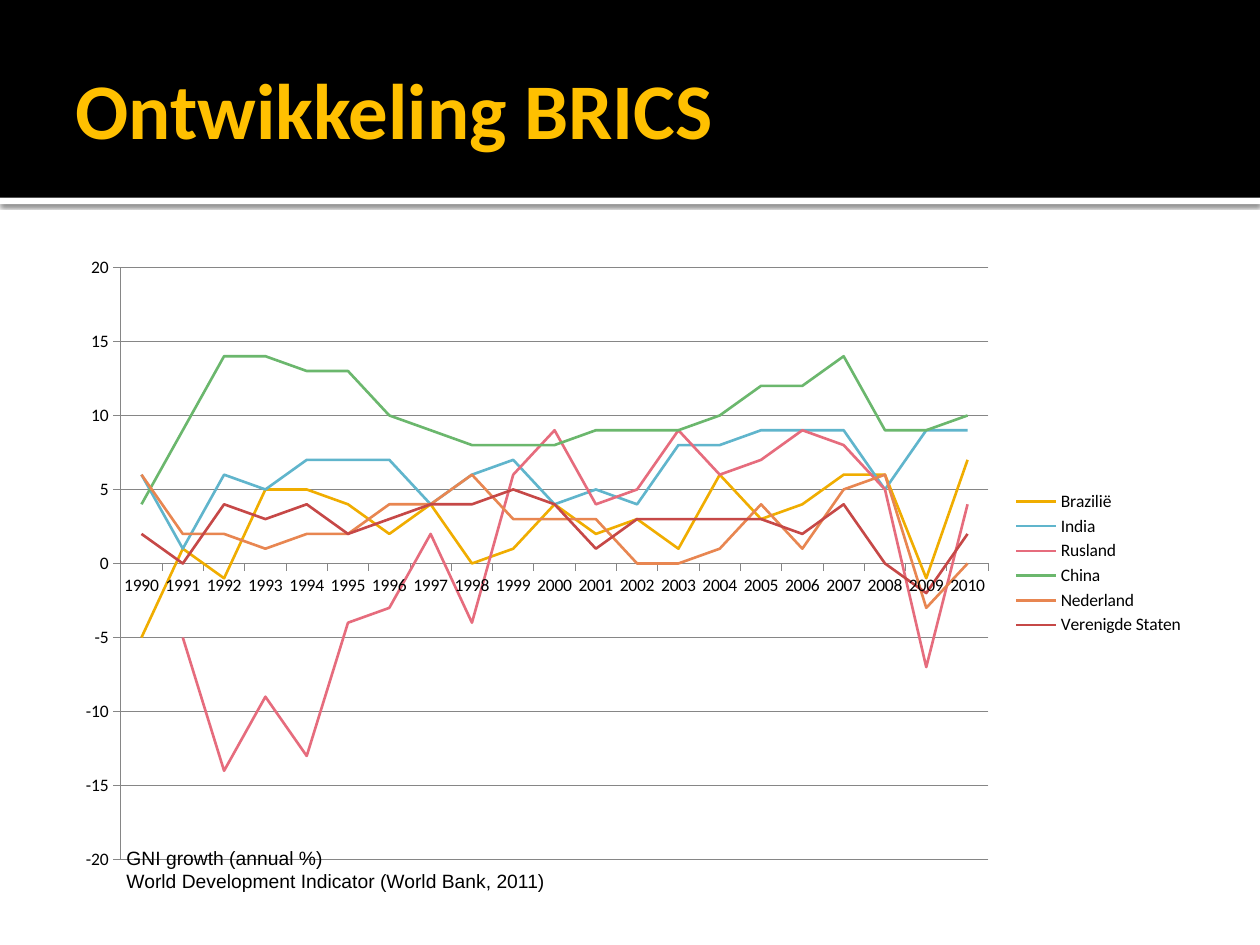
from lxml import etree
from pptx import Presentation
from pptx import util as u
from pptx.chart.data import CategoryChartData
from pptx.dml.color import RGBColor
from pptx.enum import chart as charts, shapes, text
from pptx.oxml import parse_xml
from pptx.oxml.ns import nsdecls, qn

WIDTH, HEIGHT = u.Inches(10), u.Inches(7.5)

BLACK = RGBColor(0x00, 0x00, 0x00)
WHITE = RGBColor(0xFF, 0xFF, 0xFF)
GOLD = RGBColor(0xFF, 0xC0, 0x00)
GREY = RGBColor(0x86, 0x86, 0x86)

# Growth in whole percent, the precision of the value axis
YEARS = [str(year) for year in range(1990, 2011)]
GROWTH = [
    ("Brazilië", RGBColor(0xF0, 0xAD, 0x00),
     [-5, 1, -1, 5, 5, 4, 2, 4, 0, 1, 4, 2, 3, 1, 6, 3, 4, 6, 6, -1, 7]),
    ("India", RGBColor(0x60, 0xB5, 0xCC),
     [6, 1, 6, 5, 7, 7, 7, 4, 6, 7, 4, 5, 4, 8, 8, 9, 9, 9, 5, 9, 9]),
    ("Rusland", RGBColor(0xE6, 0x6C, 0x7D),
     [None, -5, -14, -9, -13, -4, -3, 2, -4, 6, 9, 4, 5, 9, 6, 7, 9, 8, 5, -7, 4]),
    ("China", RGBColor(0x6B, 0xB7, 0x6D),
     [4, 9, 14, 14, 13, 13, 10, 9, 8, 8, 8, 9, 9, 9, 10, 12, 12, 14, 9, 9, 10]),
    ("Nederland", RGBColor(0xE8, 0x86, 0x51),
     [6, 2, 2, 1, 2, 2, 4, 4, 6, 3, 3, 3, 0, 0, 1, 4, 1, 5, 6, -3, 0]),
    ("Verenigde Staten", RGBColor(0xC6, 0x48, 0x47),
     [2, 0, 4, 3, 4, 2, 3, 4, 4, 5, 4, 1, 3, 3, 3, 3, 2, 4, 0, -2, 2]),
]


def area(left, top, width, height):
    """Turn percentages of the slide's size into lengths."""
    return (int(WIDTH * left / 100), int(HEIGHT * top / 100),
            int(WIDTH * width / 100), int(HEIGHT * height / 100))


def add_band(page, place, color):
    band = page.shapes.add_shape(shapes.MSO_SHAPE.RECTANGLE, *area(*place))
    band.shadow.inherit = False
    band.fill.solid()
    band.fill.fore_color.rgb = color
    band.line.fill.background()
    return band


def add_soft_shadow(shape):
    effects = shape.element.spPr.find(qn("a:effectLst"))
    effects.append(parse_xml(
        f'<a:outerShdw {nsdecls("a")} blurRad="{u.Pt(2.5)}" dist="{u.Pt(0.8)}" '
        'dir="5400000" algn="tl" rotWithShape="0"><a:srgbClr val="000000">'
        '<a:alpha val="60000"/></a:srgbClr></a:outerShdw>'))


def add_text(page, place, lines, font, size, color, bold=False,
             anchor=text.MSO_ANCHOR.TOP):
    box = page.shapes.add_textbox(*area(*place))
    frame = box.text_frame
    frame.word_wrap = True
    frame.vertical_anchor = anchor
    for index, line in enumerate(lines):
        para = frame.add_paragraph() if index else frame.paragraphs[0]
        span = para.add_run()
        span.text = line
        span.font.name = font
        span.font.size = u.Pt(size)
        span.font.bold = bold
        span.font.color.rgb = color


def set_plot_area(chart, **percents):
    """Fix the inner plot area, in percentages of the chart's size."""
    plot_area = chart.element.find(".//" + qn("c:plotArea"))
    for old in plot_area.findall(qn("c:layout")):
        plot_area.remove(old)
    layout = etree.Element(qn("c:layout"))
    manual = etree.SubElement(layout, qn("c:manualLayout"))
    settings = {"layoutTarget": "inner", "xMode": "edge", "yMode": "edge"}
    settings.update((name, value / 100) for name, value in percents.items())
    for name, value in settings.items():
        etree.SubElement(manual, qn("c:" + name)).set("val", str(value))
    plot_area.insert(0, layout)


def style_line(line, color, width):
    line.color.rgb = color
    line.width = u.Pt(width)


def style_axis(axis):
    axis.major_tick_mark = charts.XL_TICK_MARK.OUTSIDE
    axis.minor_tick_mark = charts.XL_TICK_MARK.NONE
    style_line(axis.format.line, GREY, 0.5)


def add_growth_chart(page, place):
    data = CategoryChartData(number_format="General")
    data.categories = YEARS
    for name, _, values in GROWTH:
        data.add_series(name, values)
    chart = page.shapes.add_chart(
        charts.XL_CHART_TYPE.LINE, *area(*place), data).chart
    chart.has_title = False
    chart.font.name = "Calibri"
    chart.font.size = u.Pt(10)
    chart.font.color.rgb = BLACK

    # Axes and gridlines
    style_axis(chart.category_axis)
    scale = chart.value_axis
    style_axis(scale)
    scale.minimum_scale, scale.maximum_scale, scale.major_unit = -20, 20, 5
    scale.has_major_gridlines = True
    style_line(scale.major_gridlines.format.line, GREY, 0.5)

    # Country lines
    plot = chart.plots[0]
    plot.vary_by_categories = False
    for series, (_, color, _) in zip(plot.series, GROWTH):
        series.smooth = False
        series.marker.style = charts.XL_MARKER_STYLE.NONE
        style_line(series.format.line, color, 1.5)

    chart.has_legend = True
    chart.legend.position = charts.XL_LEGEND_POSITION.RIGHT
    chart.legend.include_in_layout = False
    set_plot_area(chart, x=5.1, y=3.6, w=76.5, h=92.9)


def main():
    deck = Presentation()
    deck.slide_width, deck.slide_height = WIDTH, HEIGHT
    page = deck.slides.add_slide(deck.slide_layouts[6])
    page.background.fill.solid()
    page.background.fill.fore_color.rgb = WHITE

    # Header
    add_soft_shadow(add_band(page, (0, 20.93, 100, 0.67), WHITE))
    add_band(page, (0, 0, 100, 20.93), BLACK)
    add_text(page, (5, 2.27, 90, 18.27), ["Ontwikkeling BRICS"], "Calibri", 45,
             GOLD, bold=True, anchor=text.MSO_ANCHOR.MIDDLE)

    # Chart and its source
    add_growth_chart(page, (5, 25.87, 90, 67.47))
    add_text(page, (9.05, 88.87, 40.9, 6.27),
             ["GNI growth (annual %)",
              "World Development Indicator (World Bank, 2011)"],
             "Arial", 11, BLACK)

    deck.save("out.pptx")


if __name__ == "__main__":
    main()
